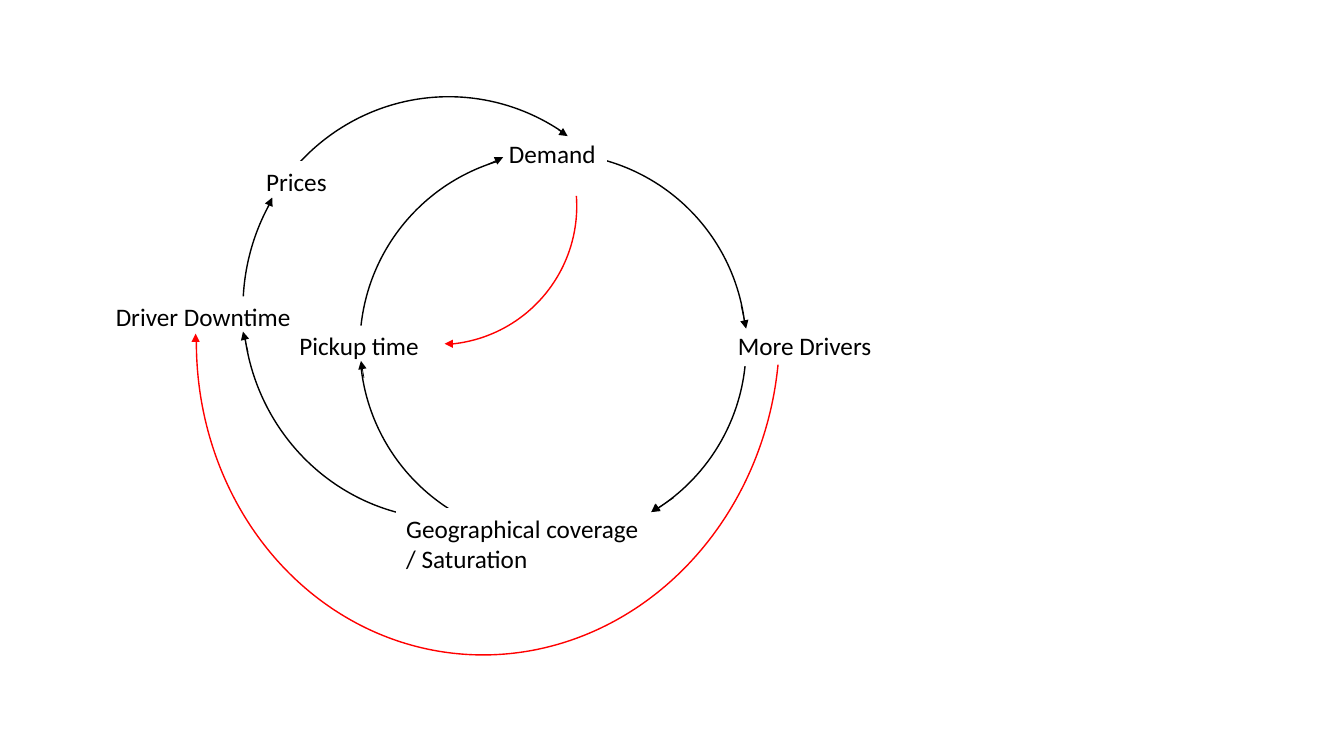
import pptx
import pptx.util
import pptx.dml.color
import pptx.enum.shapes
import pptx.enum.text
import pptx.oxml
import pptx.oxml.ns

Inches, Pt = pptx.util.Inches, pptx.util.Pt
Shape = pptx.enum.shapes.MSO_SHAPE
RGB = pptx.dml.color.RGBColor.from_string

THEME = {
    "black": RGB("000000"), "red": RGB("FF0000"), "white": RGB("FFFFFF"),
    "curve": Pt(1), "tip": Pt(0.5),
    "font": {"name": "Calibri", "size": Pt(18)},
}

# Loops: left, top, width, height, fill
RINGS = [
    (2.41, 0.96, 4.08, 4.19, None),
    (3.57, 1.52, 3.83, 3.83, "white"),
]

# Labels: left, top, width, height, lines
DRIVERS = [
    (4.95, 1.32, 1.07, 0.4, ["Demand"]),
    (7.22, 3.23, 1.54, 0.4, ["More Drivers"]),
    (3.93, 5.04, 2.59, 0.71, ["Geographical coverage", "/ Saturation"]),
    (2.87, 3.23, 1.4, 0.4, ["Pickup time"]),
]
EFFECTS = [
    (1.05, 2.94, 1.96, 0.4, ["Driver Downtime"]),
    (2.54, 1.6, 0.81, 0.4, ["Prices"]),
]

# Feedback arcs: left, top, width, height, fill, turn, angles
DEMAND_ARC = (2.97, 0.67, 2.75, 2.75, "white", 85.8, (162, 0))
SUPPLY_ARC = (1.68, 0.45, 6.32, 5.78, None, 95.5, (162, 50.255))

# Arrow tips: from x, from y, to x, to y
TIPS = {
    "black": [
        (6.51, 5.04, 6.46, 5.08), (7.35, 3.03, 7.4, 3.26),
        (6.68, 4.94, 6.46, 5.08), (4.84, 1.63, 4.99, 1.56),
        (3.61, 3.75, 3.58, 3.58), (2.46, 3.49, 2.41, 3.29),
        (2.65, 2.07, 2.7, 1.96), (5.54, 1.29, 5.63, 1.35),
    ],
    "red": [(1.94, 3.39, 1.94, 3.31), (4.53, 3.41, 4.41, 3.41)],
}

deck = pptx.Presentation()
deck.slide_width, deck.slide_height = Inches(13.33), Inches(7.5)
slide = deck.slides.add_slide(deck.slide_layouts[6])
shapes = slide.shapes


def paint(item, fill):
    if fill:
        item.fill.solid()
        item.fill.fore_color.rgb = THEME[fill]
    else:
        item.fill.background()


def curve(kind, box, fill, color):
    item = shapes.add_shape(kind, *map(Inches, box))
    item.shadow.inherit = False
    paint(item, fill)
    item.line.color.rgb = THEME[color]
    item.line.width = THEME["curve"]
    return item


def arc(data):
    *box, fill, turn, angles = data
    item = curve(Shape.ARC, box, fill, "red")
    item.rotation = turn
    for i, angle in enumerate(angles):
        item.adjustments[i] = angle


def label(data):
    *box, lines = data
    item = shapes.add_textbox(*map(Inches, box))
    paint(item, "white")
    frame = item.text_frame
    frame.text = "\n".join(lines)
    frame.word_wrap = False
    frame.auto_size = pptx.enum.text.MSO_AUTO_SIZE.SHAPE_TO_FIT_TEXT
    for para in frame.paragraphs:
        for run in para.runs:
            for key, value in THEME["font"].items():
                setattr(run.font, key, value)
            run.font.color.rgb = THEME["black"]


def tip(ends, color):
    link = shapes.add_connector(
        pptx.enum.shapes.MSO_CONNECTOR.STRAIGHT, *map(Inches, ends))
    link.line.color.rgb = THEME[color]
    link.line.width = THEME["tip"]
    head = pptx.oxml.parse_xml(
        '<a:tailEnd %s type="triangle"/>' % pptx.oxml.ns.nsdecls("a"))
    link.line._get_or_add_ln().append(head)
    link._element.spPr.append(pptx.oxml.parse_xml(
        "<a:effectLst %s/>" % pptx.oxml.ns.nsdecls("a")))


# Back to front: loops, labels and arcs, arrow tips
for *box, fill in RINGS:
    curve(Shape.OVAL, box, fill, "black")
for data in DRIVERS:
    label(data)
arc(DEMAND_ARC)
for data in EFFECTS:
    label(data)
arc(SUPPLY_ARC)
for color, group in TIPS.items():
    for ends in group:
        tip(ends, color)

deck.save("out.pptx")
